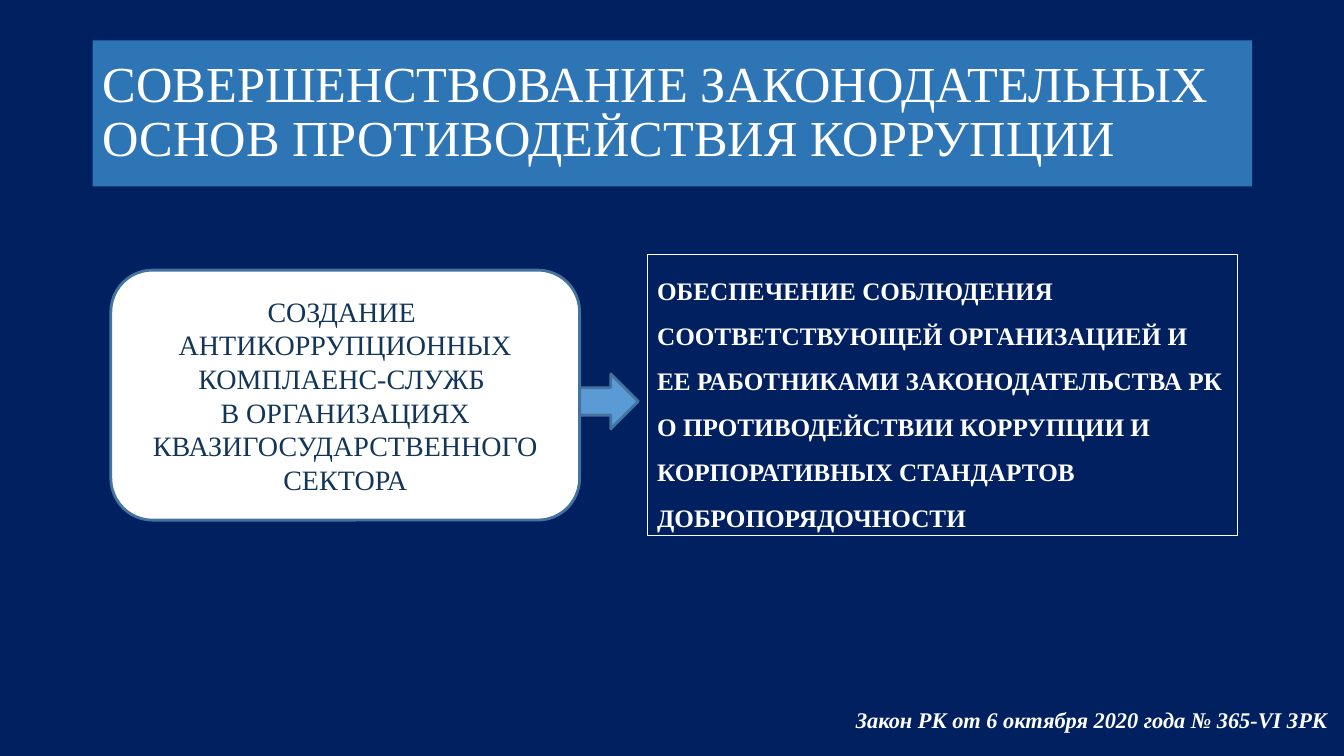
from dataclasses import dataclass

from pptx import Presentation
from pptx import util as u
from pptx.dml.color import RGBColor
from pptx.enum import shapes, text

WIDTH, HEIGHT = 13.33, 7.5
FONT = "Times New Roman"

NAVY = RGBColor(0x00, 0x20, 0x60)
TITLE_BLUE = RGBColor(0x2E, 0x75, 0xB6)
ARROW_BLUE = RGBColor(0x5B, 0x9B, 0xD5)
OUTLINE_BLUE = RGBColor(0x43, 0x73, 0x9E)
TEXT_BLUE = RGBColor(0x12, 0x35, 0x58)
WHITE = RGBColor(0xFF, 0xFF, 0xFF)


@dataclass(frozen=True)
class Area:
    """A rectangle in percent of the slide's width and height."""
    left: float
    top: float
    width: float
    height: float

    def lengths(self) -> tuple[u.Inches, ...]:
        shares = (self.left, self.top, self.width, self.height)
        return tuple(u.Inches(share / 100 * side)
                     for share, side in zip(shares, (WIDTH, HEIGHT) * 2))


@dataclass(frozen=True)
class Style:
    size: float
    color: RGBColor = WHITE
    bold: bool | None = None
    italic: bool | None = None
    align: text.PP_ALIGN = text.PP_ALIGN.LEFT
    spacing: float = 1.0
    anchor: text.MSO_ANCHOR = text.MSO_ANCHOR.TOP
    wrap: bool = True


@dataclass(frozen=True)
class Block:
    kind: shapes.MSO_SHAPE
    area: Area
    fill: RGBColor | None
    line: RGBColor
    line_width: float
    lines: tuple[str, ...] = ()
    style: Style | None = None


TITLE_AREA = Area(6.9, 5.33, 86.27, 19.33)
TITLE = "СОВЕРШЕНСТВОВАНИЕ ЗАКОНОДАТЕЛЬНЫХ ОСНОВ ПРОТИВОДЕЙСТВИЯ КОРРУПЦИИ"
TITLE_STYLE = Style(36, spacing=0.9, anchor=text.MSO_ANCHOR.MIDDLE)

LAW_AREA = Area(62.94, 92.8, 37.06, 4.93)
LAW = "Закон РК от 6 октября 2020 года № 365-VI ЗРК"
LAW_STYLE = Style(16, bold=True, italic=True, wrap=False)

# The arrow comes first, so that the measure covers its bend
BLOCKS = (
    Block(shapes.MSO_SHAPE.BENT_ARROW, Area(36.01, 49.47, 11.48, 14.53),
          ARROW_BLUE, OUTLINE_BLUE, 2),
    Block(shapes.MSO_SHAPE.ROUNDED_RECTANGLE, Area(8.25, 35.73, 34.88, 33.07),
          WHITE, OUTLINE_BLUE, 2,
          ("СОЗДАНИЕ ",
           "АНТИКОРРУПЦИОННЫХ КОМПЛАЕНС-СЛУЖБ ",
           "В ОРГАНИЗАЦИЯХ КВАЗИГОСУДАРСТВЕННОГО СЕКТОРА"),
          Style(20, TEXT_BLUE, align=text.PP_ALIGN.CENTER,
                anchor=text.MSO_ANCHOR.MIDDLE)),
    Block(shapes.MSO_SHAPE.RECTANGLE, Area(48.16, 33.73, 43.89, 37.07),
          None, WHITE, 0.75,
          ("ОБЕСПЕЧЕНИЕ СОБЛЮДЕНИЯ СООТВЕТСТВУЮЩЕЙ ОРГАНИЗАЦИЕЙ И "
           "ЕЕ РАБОТНИКАМИ ЗАКОНОДАТЕЛЬСТВА РК О ПРОТИВОДЕЙСТВИИ КОРРУПЦИИ И "
           "КОРПОРАТИВНЫХ СТАНДАРТОВ ДОБРОПОРЯДОЧНОСТИ",),
          Style(18, bold=True, spacing=1.5)),
)


def write(shape, lines: tuple[str, ...], style: Style) -> None:
    frame = shape.text_frame
    frame.auto_size = text.MSO_AUTO_SIZE.NONE
    frame.word_wrap = style.wrap
    frame.vertical_anchor = style.anchor
    for index, line in enumerate(lines):
        paragraph = frame.add_paragraph() if index else frame.paragraphs[0]
        paragraph.alignment = style.align
        paragraph.line_spacing = style.spacing
        run = paragraph.add_run()
        run.text = line
        font = run.font
        font.name, font.size = FONT, u.Pt(style.size)
        font.bold, font.italic = style.bold, style.italic
        font.color.rgb = style.color


def add_title(slide) -> None:
    title = slide.shapes.title
    title.left, title.top, title.width, title.height = TITLE_AREA.lengths()
    title.fill.solid()
    title.fill.fore_color.rgb = TITLE_BLUE
    write(title, (TITLE,), TITLE_STYLE)


def add_block(slide, block: Block) -> None:
    shape = slide.shapes.add_shape(block.kind, *block.area.lengths())
    shape.shadow.inherit = False
    if block.fill is None:
        shape.fill.background()
    else:
        shape.fill.solid()
        shape.fill.fore_color.rgb = block.fill
    shape.line.color.rgb = block.line
    shape.line.width = u.Pt(block.line_width)
    if block.style:
        write(shape, block.lines, block.style)


def main() -> None:
    presentation = Presentation()
    presentation.slide_width = u.Inches(WIDTH)
    presentation.slide_height = u.Inches(HEIGHT)
    slide = presentation.slides.add_slide(presentation.slide_layouts[5])
    slide.background.fill.solid()
    slide.background.fill.fore_color.rgb = NAVY

    # Heading
    add_title(slide)

    # Measure, arrow and purpose
    for block in BLOCKS:
        add_block(slide, block)

    # Reference to the law
    law = slide.shapes.add_textbox(*LAW_AREA.lengths())
    write(law, (LAW,), LAW_STYLE)

    presentation.save("out.pptx")


if __name__ == "__main__":
    main()
